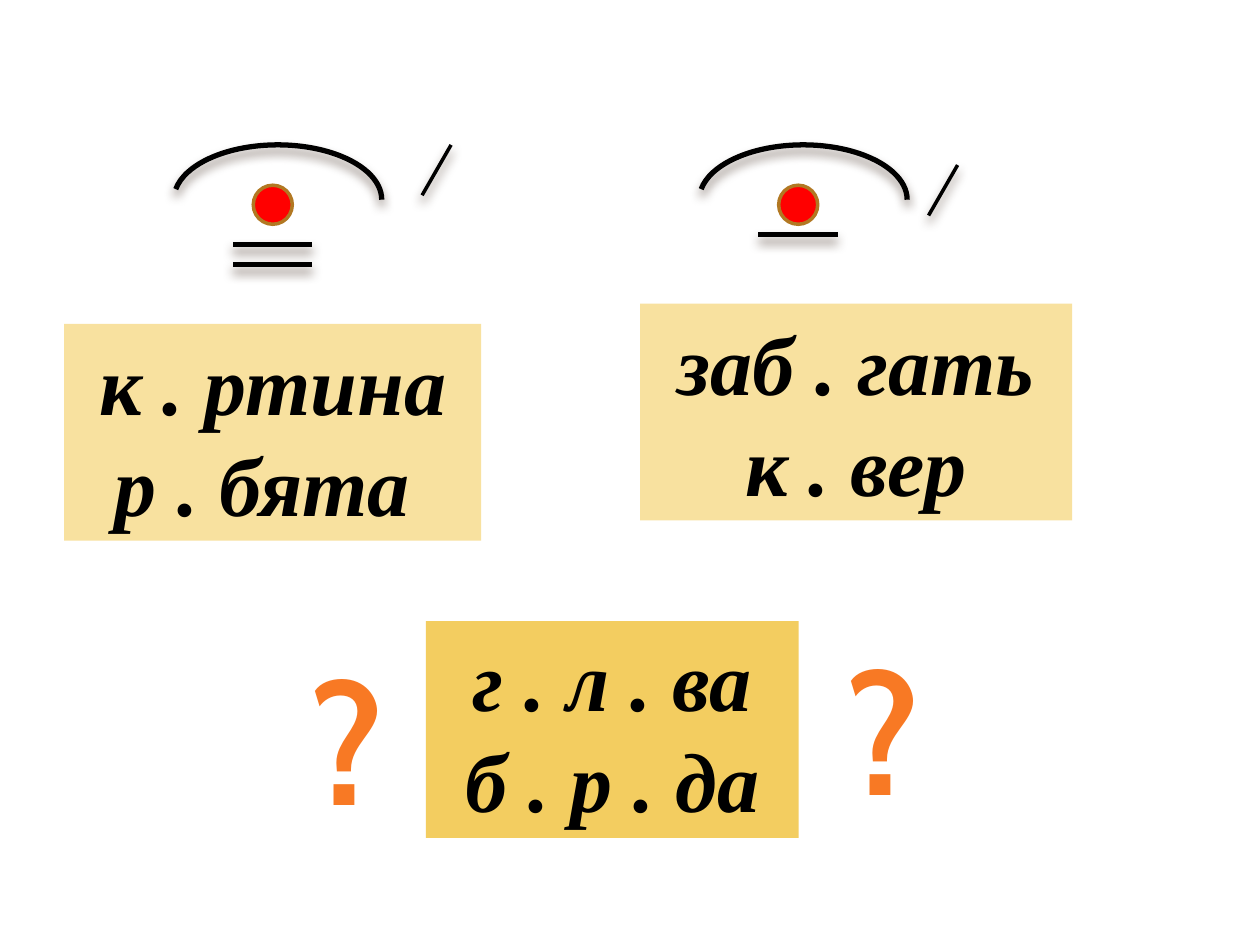
from lxml import etree
from pptx import Presentation
from pptx.dml.color import RGBColor
from pptx.enum import shapes, text
from pptx.oxml.ns import qn
from pptx.util import Inches, Pt

INK = "000000"
GEO = shapes.MSO_SHAPE


def rgb(code):
    """Turn a hex string into a colour."""
    return RGBColor.from_string(code)


def shade(item):
    """Give an item a soft shadow that falls straight down."""
    props = item._element.spPr
    for old in props.findall(qn("a:effectLst")):
        props.remove(old)
    fx = etree.SubElement(props, qn("a:effectLst"))
    drop = etree.SubElement(fx, qn("a:outerShdw"), blurRad=str(Pt(6)),
                            dist=str(Pt(4)), dir="5400000", rotWithShape="0")
    tint = etree.SubElement(drop, qn("a:srgbClr"), val="4E3B30")
    etree.SubElement(tint, qn("a:alpha"), val="60000")


def write(frame, lines, face, size, color, slant):
    """Fill a text frame with centred bold paragraphs."""
    frame.auto_size = text.MSO_AUTO_SIZE.SHAPE_TO_FIT_TEXT
    for i, line in enumerate(lines):
        para = frame.add_paragraph() if i else frame.paragraphs[0]
        para.text = line
        para.alignment = text.PP_ALIGN.CENTER
        font = para.font
        font.name, font.size = face, Pt(size)
        font.bold, font.italic = True, slant
        font.color.rgb = rgb(color)


def card(slide, left, top, width, fill, lines, anchor):
    """Add a coloured card with words on it."""
    box = slide.shapes.add_shape(GEO.RECTANGLE, Inches(left), Inches(top),
                                 Inches(width), Inches(1.72))
    box.shadow.inherit = False
    box.fill.solid()
    box.fill.fore_color.rgb = rgb(fill)
    box.line.fill.background()
    frame = box.text_frame
    frame.word_wrap = True
    frame.vertical_anchor = anchor
    write(frame, lines, "Times New Roman", 48, INK, True)


def arc(slide, left, top):
    """Add the arch that marks a root."""
    bow = slide.shapes.add_shape(GEO.ARC, Inches(left), Inches(top),
                                 Inches(1.65), Inches(0.87))
    bow.adjustments[0] = 111.53
    bow.adjustments[1] = 0
    bow.fill.background()
    bow.line.color.rgb = rgb(INK)
    bow.line.width = Pt(3)
    shade(bow)


def stroke(slide, x, y, dx, dy, width):
    """Add a black line with a shadow."""
    line = slide.shapes.add_connector(
        shapes.MSO_CONNECTOR.STRAIGHT, Inches(x), Inches(y),
        Inches(x + dx), Inches(y + dy))
    line.line.color.rgb = rgb(INK)
    line.line.width = Pt(width)
    shade(line)


def dot(slide, left, top):
    """Add the red dot that stands for a vowel."""
    spot = slide.shapes.add_shape(GEO.OVAL, Inches(left), Inches(top),
                                  Inches(0.31), Inches(0.31))
    spot.shadow.inherit = False
    spot.fill.solid()
    spot.fill.fore_color.rgb = rgb("FF0000")
    spot.line.color.rgb = rgb("B27822")
    spot.line.width = Pt(2)


def root(slide, left, slash, bars):
    """Draw a root scheme: arch, stress mark, underlines and dot."""
    arc(slide, left, 1.15)
    stroke(slide, *slash, -0.23, 0.4, 2)
    for y in bars:
        stroke(slide, left + 0.47, y, 0.63, 0, 3)
    dot(slide, left + 0.63, 1.47)


def query(slide, left, top):
    """Add a large orange question mark."""
    box = slide.shapes.add_textbox(Inches(left), Inches(top),
                                   Inches(0.88), Inches(1.72))
    box.text_frame.word_wrap = False
    write(box.text_frame, ["?"], "Cabin", 96, "F87924", False)


def main():
    """Build the slide and save it."""
    deck = Presentation()
    deck.slide_width, deck.slide_height = Inches(10), Inches(7.5)
    slide = deck.slides.add_slide(deck.slide_layouts[6])
    mid, top = text.MSO_ANCHOR.MIDDLE, text.MSO_ANCHOR.TOP
    card(slide, 0.51, 2.57, 3.31, "F8E19F", ["к . ртина р . бята "], mid)
    card(slide, 5.08, 2.41, 3.43, "F8E19F", ["заб . гать к . вер"], mid)
    root(slide, 1.38, (3.58, 1.15), [2.1, 1.94])
    root(slide, 5.55, (7.6, 1.31), [1.86])
    card(slide, 3.38, 4.93, 2.96, "F3CD60", ["г . л . ва", "б . р . да"], top)
    query(slide, 2.32, 5.01)
    query(slide, 6.57, 4.93)
    deck.save("out.pptx")


if __name__ == "__main__":
    main()
